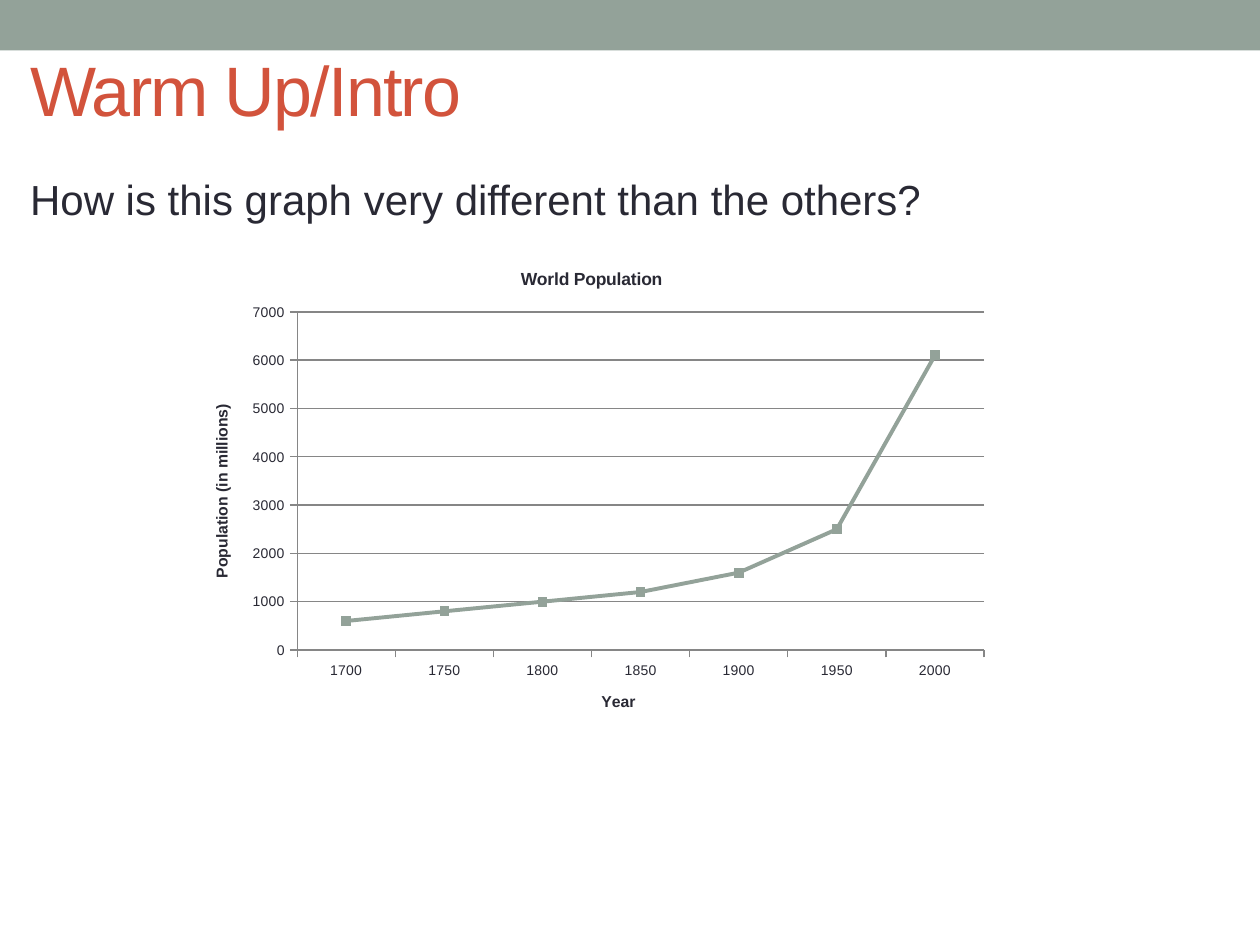
import dataclasses

import lxml.etree
import pptx
import pptx.chart.data
import pptx.dml.color
import pptx.enum.chart
import pptx.enum.shapes
import pptx.enum.text
import pptx.oxml.ns
import pptx.util

Inches = pptx.util.Inches
Pt = pptx.util.Pt
RGB = pptx.dml.color.RGBColor.from_string


@dataclasses.dataclass(frozen=True)
class Theme:
    """Colours, typeface and type sizes of the slide."""
    font: str = "Arial"
    sage: str = "93A299"
    rust: str = "D2533C"
    ink: str = "292934"
    rule: str = "868686"
    heading: int = 40
    question: int = 24
    chart_title: int = 10
    axis_title: int = 9
    tick: int = 8


THEME = Theme()
POPULATION = {"1700": 600, "1750": 800, "1800": 1000, "1850": 1200,
              "1900": 1600, "1950": 2500, "2000": 6100}


def style_font(font, size, color=THEME.ink, bold=False):
    """Apply the typeface with a size, colour and weight."""
    font.name = THEME.font
    font.size = Pt(size)
    font.bold = bold
    font.color.rgb = RGB(color)


def add_band(slide):
    """Draw the coloured band along the top edge."""
    band = slide.shapes.add_shape(pptx.enum.shapes.MSO_SHAPE.RECTANGLE,
                                  0, 0, Inches(10), Inches(0.4))
    band.shadow.inherit = False
    band.fill.solid()
    band.fill.fore_color.rgb = RGB(THEME.sage)
    band.line.fill.background()


def write_text(frame, text, size, color, anchor):
    """Write one left-aligned paragraph and return its run."""
    frame.text = text
    frame.word_wrap = True
    frame.auto_size = pptx.enum.text.MSO_AUTO_SIZE.NONE
    frame.vertical_anchor = anchor
    paragraph = frame.paragraphs[0]
    paragraph.alignment = pptx.enum.text.PP_ALIGN.LEFT
    run = paragraph.runs[0]
    style_font(run.font, size, color)
    return run


def add_heading(slide, text):
    """Place the slide title with tightened letter spacing."""
    heading = slide.shapes.title
    heading.left, heading.top = Inches(0.14), Inches(0.16)
    heading.width, heading.height = Inches(9.61), Inches(1.08)
    run = write_text(heading.text_frame, text, THEME.heading, THEME.rust,
                     pptx.enum.text.MSO_ANCHOR.MIDDLE)
    run._r.get_or_add_rPr().set("spc", "-100")


def add_question(slide, text):
    """Place the question below the title."""
    question = slide.shapes.add_textbox(Inches(0.14), Inches(1.33), Inches(9.61), Inches(0.89))
    write_text(question.text_frame, text, THEME.question, THEME.ink,
               pptx.enum.text.MSO_ANCHOR.TOP)
    question.text_frame.paragraphs[0].space_before = Pt(0.2 * THEME.question)


def write_chart_title(owner, text, size):
    """Give a chart or an axis a bold title."""
    title = owner.chart_title if hasattr(owner, "chart_title") else owner.axis_title
    title.text_frame.text = text
    style_font(title.text_frame.paragraphs[0].runs[0].font, size, bold=True)


def style_axis(axis, title):
    """Format an axis with its title, labels and outer ticks."""
    write_chart_title(axis, title, THEME.axis_title)
    style_font(axis.tick_labels.font, THEME.tick)
    axis.major_tick_mark = pptx.enum.chart.XL_TICK_MARK.OUTSIDE
    axis.format.line.color.rgb = RGB(THEME.rule)
    axis.format.line.width = Pt(0.75)


def set_plot_area(chart, x, y, w, h):
    """Fix the inner plot area as fractions of the chart."""
    plot_area = chart._chartSpace.chart.plotArea
    qn = pptx.oxml.ns.qn
    for old in plot_area.findall(qn("c:layout")):
        plot_area.remove(old)
    layout = lxml.etree.Element(qn("c:layout"))
    manual = lxml.etree.SubElement(layout, qn("c:manualLayout"))
    settings = {"layoutTarget": "inner", "xMode": "edge", "yMode": "edge",
                "x": x, "y": y, "w": w, "h": h}
    for name, value in settings.items():
        lxml.etree.SubElement(manual, qn(f"c:{name}")).set("val", str(value))
    plot_area.insert(0, layout)


def style_series(series):
    """Format the population line and its square markers."""
    series.smooth = False
    series.format.line.color.rgb = RGB(THEME.sage)
    series.format.line.width = Pt(2.25)
    series.marker.style = pptx.enum.chart.XL_MARKER_STYLE.SQUARE
    series.marker.size = 5
    series.marker.format.fill.solid()
    series.marker.format.fill.fore_color.rgb = RGB(THEME.sage)
    series.marker.format.line.color.rgb = RGB(THEME.sage)


def add_population_chart(slide):
    """Draw world population by year as a line chart."""
    data = pptx.chart.data.CategoryChartData()
    data.categories = list(POPULATION)
    data.add_series("Series 1", list(POPULATION.values()))
    chart = slide.shapes.add_chart(pptx.enum.chart.XL_CHART_TYPE.LINE_MARKERS,
                                   Inches(1.45), Inches(1.97), Inches(6.49), Inches(3.89),
                                   data).chart
    style_font(chart.font, THEME.chart_title)
    chart.has_legend = False
    write_chart_title(chart, "World Population", THEME.chart_title)
    chart.plots[0].vary_by_categories = False
    style_axis(chart.category_axis, "Year")
    style_axis(chart.value_axis, "Population (in millions)")
    chart.value_axis.minimum_scale = 0
    chart.value_axis.maximum_scale = 7000
    chart.value_axis.major_unit = 1000
    gridlines = chart.value_axis.major_gridlines.format.line
    gridlines.color.rgb = RGB(THEME.rule)
    gridlines.width = Pt(0.75)
    style_series(chart.plots[0].series[0])
    set_plot_area(chart, 0.14, 0.13, 0.84, 0.69)


def main():
    """Build and save the slide."""
    deck = pptx.Presentation()
    deck.slide_width, deck.slide_height = Inches(10), Inches(7.5)
    slide = deck.slides.add_slide(deck.slide_layouts[5])
    add_band(slide)
    add_heading(slide, "Warm Up/Intro")
    add_question(slide, "How is this graph very different than the others?")
    add_population_chart(slide)
    deck.save("out.pptx")


if __name__ == "__main__":
    main()
